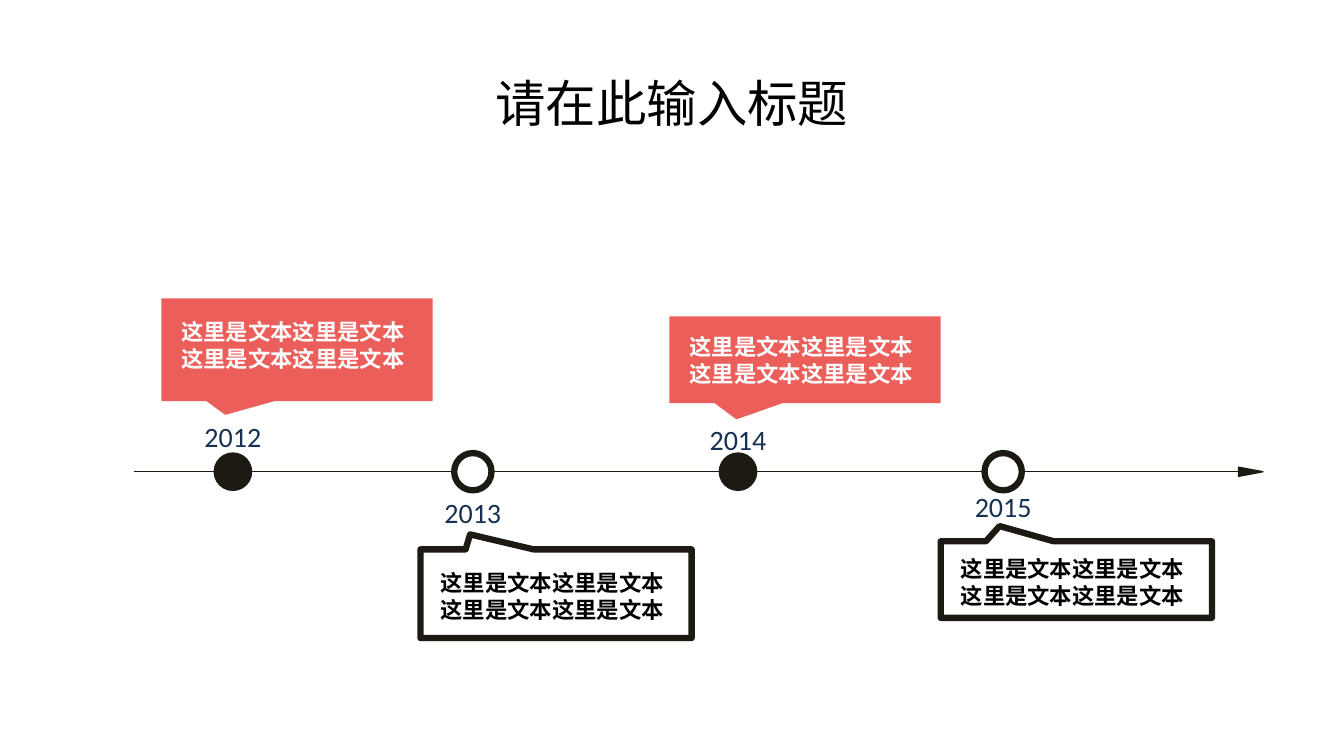
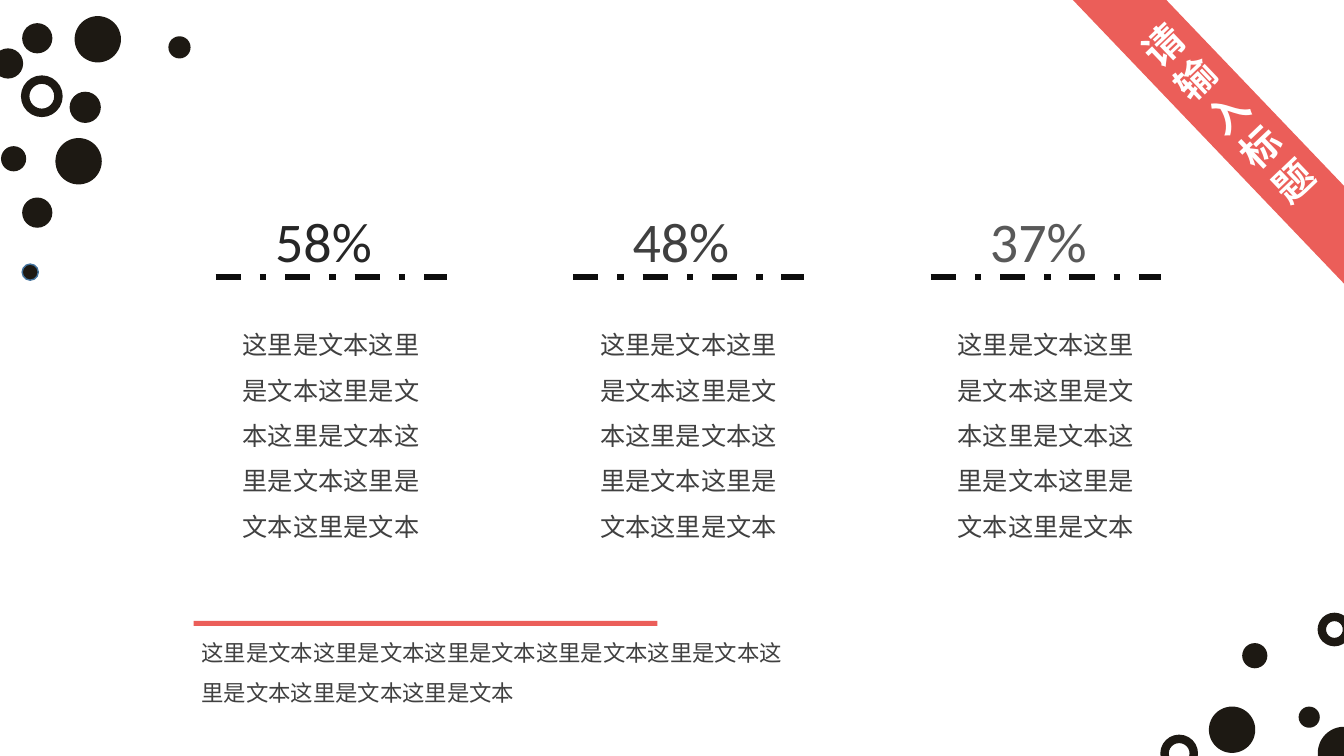
import pptx
import pptx.util
import pptx.dml.color
import pptx.enum.dml
import pptx.enum.shapes
import pptx.enum.text
import pptx.oxml.ns
from lxml import etree

Inches, Pt = pptx.util.Inches, pptx.util.Pt
RGBColor = pptx.dml.color.RGBColor
SHAPE = pptx.enum.shapes.MSO_SHAPE
CENTER = pptx.enum.text.PP_ALIGN.CENTER
qn = pptx.oxml.ns.qn

INK = RGBColor(0x1D, 0x19, 0x13)
CORAL = RGBColor(0xEB, 0x5E, 0x59)
NAVY = RGBColor(0x16, 0x31, 0x52)
STEEL = RGBColor(0x43, 0x73, 0x9E)
WHITE = RGBColor(0xFF, 0xFF, 0xFF)
BLACK = RGBColor(0, 0, 0)
DASH = RGBColor(0x0D, 0x0D, 0x0D)
GREY_DARK = RGBColor(0x26, 0x26, 0x26)
GREY = RGBColor(0x40, 0x40, 0x40)
GREY_LIGHT = RGBColor(0x59, 0x59, 0x59)
LATIN, CJK = "Calibri", "Noto Sans CJK SC"

PHRASE = "这里是文本"


def write(tf, text, size, color, font=CJK, bold=False, align=None, spacing=None):
    """Fill a text frame; each line of text becomes a paragraph."""
    tf.word_wrap = True
    tf.text = text
    for p in tf.paragraphs:
        p.alignment = align
        p.line_spacing = spacing
        for r in p.runs:
            r.font.name = font
            r.font.size = Pt(size)
            r.font.bold = bold
            r.font.color.rgb = color
            etree.SubElement(r.font._element, qn("a:ea"), typeface=font)


def add_text(s, box, text, size, color, **style):
    tb = s.shapes.add_textbox(*map(Inches, box))
    write(tb.text_frame, text, size, color, **style)
    tb.text_frame.auto_size = pptx.enum.text.MSO_AUTO_SIZE.SHAPE_TO_FIT_TEXT


def add_shape(parent, kind, box, fill=None, line=None, width=1, rotation=0):
    sp = parent.shapes.add_shape(kind, *map(Inches, box))
    sp.shadow.inherit = False
    sp.rotation = rotation
    if fill is None:
        sp.fill.background()
    else:
        sp.fill.solid()
        sp.fill.fore_color.rgb = fill
    if line is None:
        sp.line.fill.background()
    else:
        sp.line.color.rgb = line
        sp.line.width = Pt(width)
    return sp


def add_line(s, x1, x2, y, color, width, dash=None):
    line = s.shapes.add_connector(pptx.enum.shapes.MSO_CONNECTOR.STRAIGHT,
                                  Inches(x1), Inches(y), Inches(x2), Inches(y))
    line.line.color.rgb = color
    line.line.width = Pt(width)
    line.line.dash_style = dash
    etree.SubElement(line._element.spPr, qn("a:effectLst"))


def add_axis(s, left, right, y):
    add_line(s, left, right, y, INK, 0.5)
    add_shape(s, SHAPE.ISOSCELES_TRIANGLE, (right - 0.02, y - 0.12, 0.09, 0.24),
              INK, INK, rotation=90)


def add_event(s, year, x, axis_y, year_top, callout, tail, text_drop, above):
    """Place a node at x on the axis with its year and its callout (left, top, height)."""
    node, year_width = 0.37, 1.57
    left, top, height = callout
    fill, line, width = (INK, INK, 1) if above else (WHITE, INK, 4.5)
    add_shape(s, SHAPE.OVAL, (x - node / 2, axis_y - node / 2, node, node),
              fill, line, width)
    bubble = add_shape(s, SHAPE.RECTANGULAR_CALLOUT, (left, top, 2.69, height),
                       CORAL if above else WHITE, None if above else INK, 4.5,
                       0 if above else 180)
    bubble.adjustments[0], bubble.adjustments[1] = tail
    add_text(s, (x - year_width / 2, year_top, year_width, 0.44), year, 20, NAVY,
             font=LATIN, align=CENTER)
    add_text(s, (left + 0.1, top + text_drop, 2.85, 0.94),
             "\n".join([PHRASE * 2] * 2), 16, WHITE if above else BLACK, bold=True)


def add_dots(s, left, top, dots):
    """Group round dots given as (x, y, diameter, style) from the corner."""
    styles = {"solid": (INK, None, 1), "ring": (None, INK, 6), "edged": (INK, STEEL, 1)}
    group = s.shapes.add_group_shape()
    for x, y, d, style in dots:
        add_shape(group, SHAPE.OVAL, (left + x, top + y, d, d), *styles[style])


def add_column(s, left, top, percent, color):
    add_text(s, (left + 0.49, top, 1.81, 0.77), percent, 40, color, font=LATIN)
    add_line(s, left, left + 2.29, top + 0.75, DASH, 4.5,
             pptx.enum.dml.MSO_LINE.DASH_DOT)
    add_text(s, (left + 0.17, top + 1.07, 1.96, 2.73), PHRASE * 7, 18, GREY, spacing=1.5)


def add_footnote(s, left, top):
    add_text(s, (left, top, 6.08, 1.22), PHRASE * 8, 16, GREY, spacing=1.5)
    add_shape(s, SHAPE.RECTANGLE, (left + 0.02, top, 4.6, 0.05), CORAL)


def add_ribbon(s, box, text):
    ribbon = add_shape(s, SHAPE.RECTANGLE, box, CORAL, rotation=316.3)
    ribbon.text_frame.vertical_anchor = pptx.enum.text.MSO_ANCHOR.MIDDLE
    write(ribbon.text_frame, text, 28, WHITE, bold=True, align=CENTER)


def timeline_slide(s):
    axis_y = 4.68
    add_axis(s, 1.33, 12.38, axis_y)
    events = [
        ("2012", 2.31, 4.11, (1.6, 2.96, 1.02), (-0.264, 0.633), 0.15, True),
        ("2013", 4.69, 4.87, (4.17, 5.45, 0.88), (0.317, 0.669), 0.15, False),
        ("2014", 7.32, 4.14, (6.64, 3.14, 0.86), (-0.253, 0.687), 0.12, True),
        ("2015", 9.95, 4.81, (9.33, 5.37, 0.76), (0.283, 0.699), 0.09, False),
    ]
    for year, x, *rest in events:
        add_event(s, year, x, axis_y, *rest)
    add_text(s, (4.03, 0.67, 5.27, 0.71), "请在此输入标题", 36, BLACK, align=CENTER)


def percent_slide(s):
    columns = [("58%", GREY_DARK), ("48%", GREY), ("37%", GREY_LIGHT)]
    for i, (percent, color) in enumerate(columns):
        add_column(s, 2.14 + 3.545 * i, 2, percent, color)
    add_dots(s, 0, 0, [
        (1.67, 0.36, 0.22, "solid"), (0.01, 1.45, 0.25, "solid"),
        (0.69, 0.91, 0.31, "solid"), (-0.07, 0.48, 0.3, "solid"),
        (0.22, 2.62, 0.16, "edged"), (0.25, 0.79, 0.33, "ring"),
        (0.74, 0.16, 0.46, "solid"), (0.22, 1.96, 0.3, "solid"),
        (0.22, 0.23, 0.3, "solid"), (0.55, 1.37, 0.46, "solid"),
    ])
    add_footnote(s, 1.9, 6.16)
    add_ribbon(s, (11.84, -1.46, 0.67, 5.16), "请输入标题")
    add_dots(s, 11.55, 6.12, [
        (1.52, 1.09, 0.52, "solid"), (0.44, 0.89, 0.46, "solid"),
        (1.33, 0.89, 0.21, "solid"), (0.77, 0.26, 0.25, "solid"),
        (0, 1.21, 0.29, "ring"), (1.56, 0, 0.25, "ring"),
    ])


def main():
    prs = pptx.Presentation()
    prs.slide_width, prs.slide_height = Inches(13.33), Inches(7.5)
    for build in (timeline_slide, percent_slide):
        build(prs.slides.add_slide(prs.slide_layouts[6]))
    prs.save("out.pptx")


if __name__ == "__main__":
    main()
